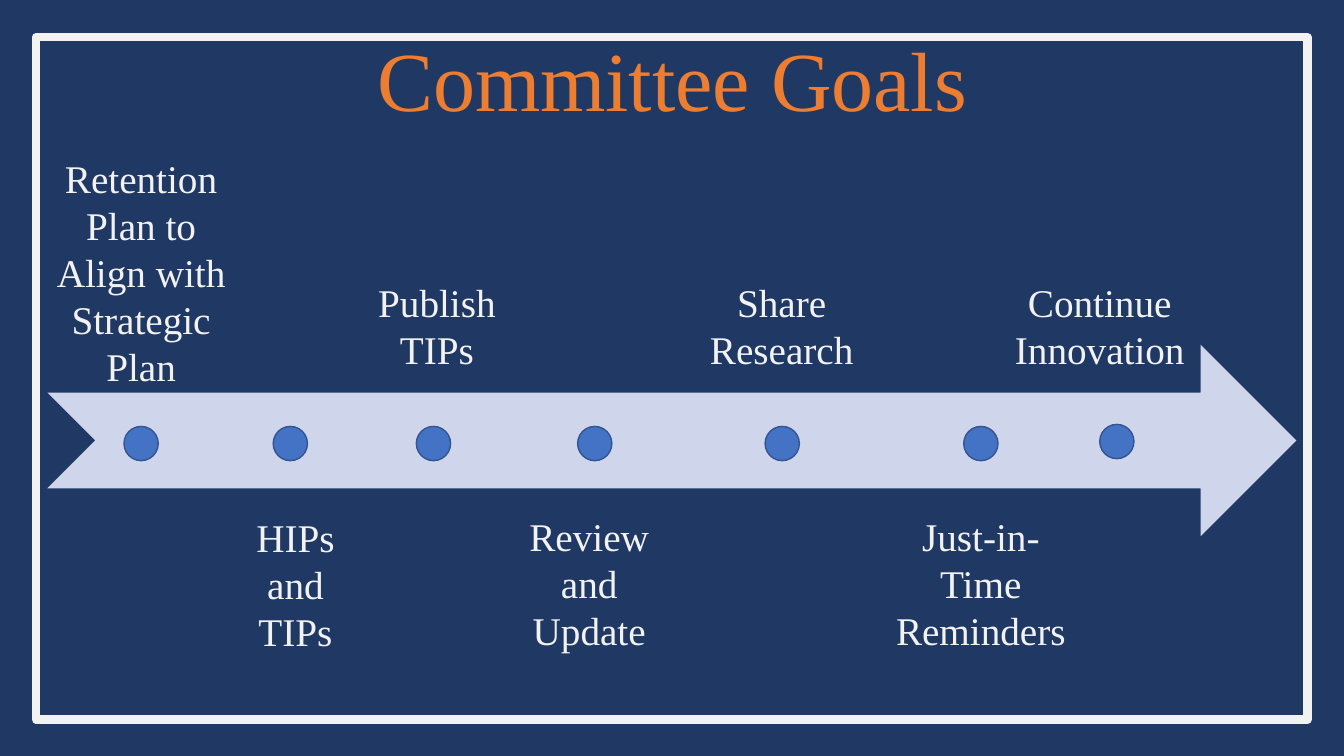
import dataclasses

import pptx
import pptx.dml.color
import pptx.enum.shapes
import pptx.enum.text
import pptx.util

KIND = pptx.enum.shapes.MSO_SHAPE
ANCHOR = pptx.enum.text.MSO_ANCHOR


@dataclasses.dataclass(frozen=True)
class Theme:
    navy: str = "203864"
    pale: str = "F2F2F2"
    orange: str = "ED7D31"
    band: str = "CFD5EA"
    blue: str = "4472C4"
    rim: str = "325491"
    font: str = "Times New Roman"
    title: int = 60
    label: int = 28


def tint(code):
    return pptx.dml.color.RGBColor.from_string(code)


class Deck:
    """Draws on one slide; lengths are cells of a 100 by 100 grid."""

    def __init__(self, theme):
        self.theme = theme
        self.file = pptx.Presentation()
        self.file.slide_width = pptx.util.Inches(13.33)
        self.file.slide_height = pptx.util.Inches(7.5)
        self.slide = self.file.slides.add_slide(self.file.slide_layouts[6])
        fill = self.slide.background.fill
        fill.solid()
        fill.fore_color.rgb = tint(theme.navy)

    def place(self, left, top, width, height):
        """Turn columns and rows into slide lengths."""
        col = self.file.slide_width / 100
        row = self.file.slide_height / 100
        return [round(n) for n in (left * col, top * row, width * col, height * row)]

    def shape(self, kind, box, fill, line=None, weight=1):
        item = self.slide.shapes.add_shape(kind, *self.place(*box))
        item.shadow.inherit = False
        item.fill.solid()
        item.fill.fore_color.rgb = tint(fill)
        if line:
            item.line.color.rgb = tint(line)
            item.line.width = pptx.util.Pt(weight)
        else:
            item.line.fill.background()

    def text(self, words, box, size, color, anchor=ANCHOR.TOP, space=1.0):
        frame = self.slide.shapes.add_textbox(*self.place(*box)).text_frame
        frame.word_wrap = True
        frame.vertical_anchor = anchor
        para = frame.paragraphs[0]
        para.alignment = pptx.enum.text.PP_ALIGN.CENTER
        para.line_spacing = space
        run = para.add_run()
        run.text = words
        run.font.name = self.theme.font
        run.font.size = pptx.util.Pt(size)
        run.font.color.rgb = tint(color)

    def dot(self, col, row):
        wide, high = 2.55, 4.53
        box = (col - wide / 2, row - high / 2, wide, high)
        self.shape(KIND.OVAL, box, self.theme.blue, self.theme.rim)

    def label(self, words, mid, top, width, lines):
        box = (mid - width / 2, top, width, 1.33 + 6.28 * lines)
        self.text(words, box, self.theme.label, self.theme.pale)


# Words, dot column, dot row, label centre, label top, label width, lines
GOALS = [
    ("Retention Plan to Align with Strategic Plan", 10.5, 58.67, 10.5, 19.73, 14.55, 5),
    ("HIPs and TIPs", 21.6, 58.67, 21.98, 67.2, 10.05, 3),
    ("Publish TIPs", 32.25, 58.67, 32.51, 36.13, 11.03, 2),
    ("Review and Update", 44.25, 58.67, 43.84, 67.07, 11.63, 3),
    ("Share Research", 58.2, 58.67, 58.16, 36.13, 12.98, 2),
    ("Just-in-Time Reminders", 72.98, 58.67, 72.98, 67.07, 14.55, 3),
    ("Continue Innovation", 83.1, 58.4, 81.83, 36.13, 14.55, 2),
]


def main():
    theme = Theme()
    deck = Deck(theme)
    deck.shape(KIND.RECTANGLE, (2.7, 4.93, 94.58, 90.27), theme.navy, theme.pale, 6)
    deck.text("Committee Goals", (6.9, 1.47, 86.25, 19.33), theme.title,
              theme.orange, ANCHOR.MIDDLE, 0.9)
    deck.shape(KIND.NOTCHED_RIGHT_ARROW, (3.53, 45.6, 92.93, 25.33), theme.band)
    for words, col, row, mid, top, width, lines in GOALS:
        deck.label(words, mid, top, width, lines)
        deck.dot(col, row)
    deck.file.save("out.pptx")


if __name__ == "__main__":
    main()
